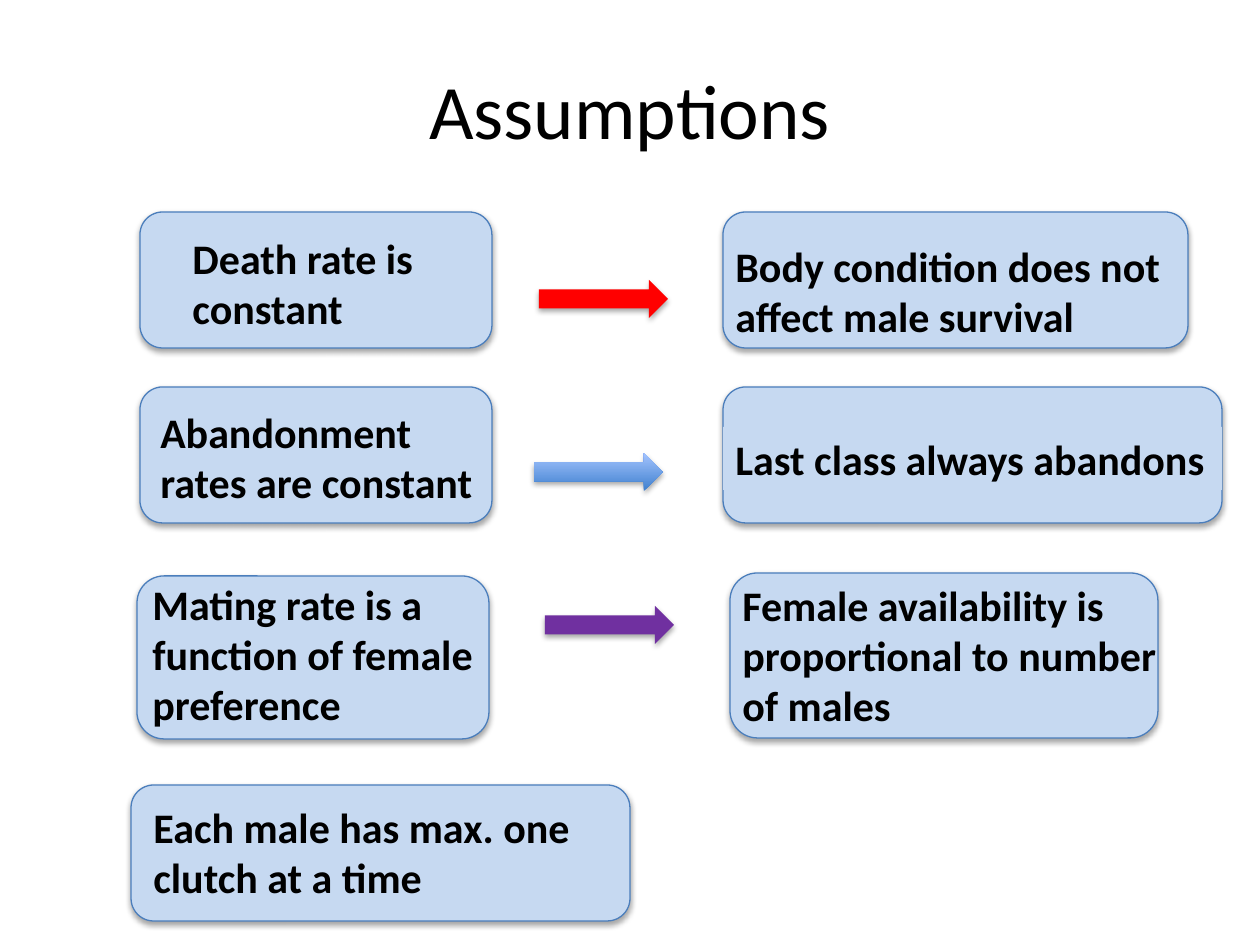
import pptx
import pptx.dml.color
import pptx.enum.shapes
import pptx.enum.text
import pptx.util
from dataclasses import dataclass
from lxml import etree

PX = 914400 / 126  # EMU per pixel
A = "http://schemas.openxmlformats.org/drawingml/2006/main"
SHAPE = pptx.enum.shapes.MSO_SHAPE
ALIGN = pptx.enum.text.PP_ALIGN
ANCHOR = pptx.enum.text.MSO_ANCHOR
AUTO = pptx.enum.text.MSO_AUTO_SIZE


@dataclass(frozen=True)
class Theme:
    font: str = "Calibri"
    title_pt: int = 44
    body_pt: int = 24
    ink: str = "000000"
    box: str = "C6D9F1"
    edge: str = "4B7EBC"
    edge_pt: float = 0.75
    red: str = "FF0000"
    blue: tuple = ("3F80CE", "A4C4FF")  # bottom, top
    purple: str = "7030A0"


THEME = Theme()


def px(*lengths):
    return [pptx.util.Emu(round(n * PX)) for n in lengths]


def rgb(value):
    return pptx.dml.color.RGBColor.from_string(value)


def apply(target, formats):
    for name, value in formats.items():
        setattr(target, name, value)


def add_shadow(sp):
    sp.shadow.inherit = False
    effects = sp._element.spPr.find(f"{{{A}}}effectLst")
    shadow = etree.SubElement(effects, f"{{{A}}}outerShdw", blurRad="40000",
                              dist="23000", dir="5400000", rotWithShape="0")
    color = etree.SubElement(shadow, f"{{{A}}}srgbClr", val=THEME.ink)
    etree.SubElement(color, f"{{{A}}}alpha", val="35000")


def add_box(slide, *place):
    sp = slide.shapes.add_shape(SHAPE.ROUNDED_RECTANGLE, *px(*place))
    sp.fill.solid()
    sp.fill.fore_color.rgb = rgb(THEME.box)
    sp.line.color.rgb = rgb(THEME.edge)
    sp.line.width = pptx.util.Pt(THEME.edge_pt)
    add_shadow(sp)


def add_arrow(slide, left, top, color):
    sp = slide.shapes.add_shape(SHAPE.RIGHT_ARROW, *px(left, top, 129, 38))
    if isinstance(color, tuple):
        sp.fill.gradient()
        sp.fill.gradient_angle = 90
        for stop, value in zip(sp.fill.gradient_stops, color):
            stop.color.rgb = rgb(value)
    else:
        sp.fill.solid()
        sp.fill.fore_color.rgb = rgb(color)
    sp.line.fill.background()
    add_shadow(sp)


def add_text(slide, place, lines, wrap=True, fill=None, size=THEME.body_pt,
             bold=True, align=ALIGN.LEFT, anchor=ANCHOR.TOP, auto=AUTO.SHAPE_TO_FIT_TEXT):
    sp = slide.shapes.add_textbox(*px(*place))
    if fill:
        sp.fill.solid()
        sp.fill.fore_color.rgb = rgb(fill)
    tf = sp.text_frame
    apply(tf, {"word_wrap": wrap, "vertical_anchor": anchor, "auto_size": auto})
    for i, line in enumerate(lines):
        p = tf.paragraphs[0] if i == 0 else tf.add_paragraph()
        p.alignment = align
        r = p.add_run()
        r.text = line
        apply(r.font, {"name": THEME.font, "size": pptx.util.Pt(size), "bold": bold})
        r.font.color.rgb = rgb(THEME.ink)


def main():
    prs = pptx.Presentation()
    prs.slide_width, prs.slide_height = px(1260, 945)
    slide = prs.slides.add_slide(prs.slide_layouts[6])

    # Title
    add_text(slide, (63, 30, 1134, 158), ["Assumptions"], size=THEME.title_pt,
             bold=False, align=ALIGN.CENTER, anchor=ANCHOR.MIDDLE, auto=AUTO.NONE)

    # Boxes: assumptions on the left, consequences on the right
    for place in ((140, 212, 352, 136), (723, 212, 465, 136),
                  (140, 387, 352, 136), (723, 387, 499, 136),
                  (137, 576, 352, 163), (730, 573, 428, 165),
                  (131, 785, 499, 136)):
        add_box(slide, *place)

    # Wrapped statements
    for place, text in (
            ((723, 234, 499, 115), "Body condition does not affect male survival"),
            ((148, 400, 352, 115), "Abandonment rates are constant"),
            ((140, 572, 352, 165), "Mating rate is a function of female preference"),
            ((730, 573, 465, 165), "Female availability is proportional to number of males")):
        add_text(slide, place, [text])

    # Statements with fixed line breaks
    for place, lines, fill in (
            ((180, 226, 258, 115), ["Death rate is", "constant"], None),
            ((723, 427, 499, 63), ["Last class always abandons"], THEME.box),
            ((141, 795, 447, 115), ["Each male has max. one", "clutch at a time"], THEME.box)):
        add_text(slide, place, lines, wrap=False, fill=fill)

    # Arrows from assumption to consequence
    for left, top, color in ((539, 280, THEME.red), (534, 453, THEME.blue),
                             (545, 606, THEME.purple)):
        add_arrow(slide, left, top, color)

    prs.save("out.pptx")


if __name__ == "__main__":
    main()
